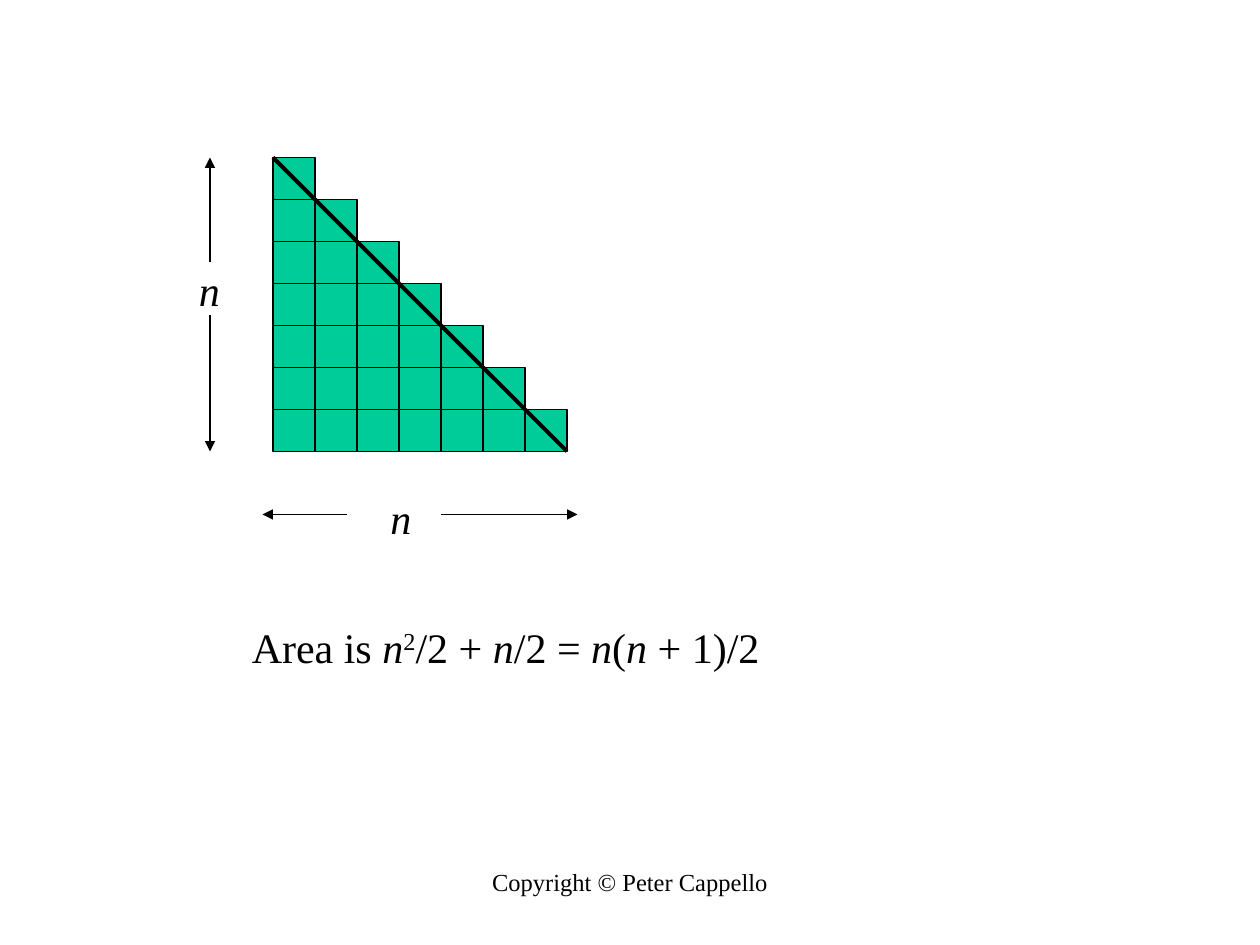
from lxml.etree import SubElement
from pptx import Presentation
from pptx.dml.color import RGBColor
from pptx.enum.shapes import MSO_CONNECTOR, MSO_SHAPE
from pptx.enum.text import MSO_AUTO_SIZE, PP_ALIGN
from pptx.oxml.ns import qn
from pptx.util import Inches, Pt

WIDE, HIGH = 10, 7.5
CELL = WIDE / 30
SIDE = 7
LEFT, TOP = 6.5, 3.75
INK, GREEN = "000000", "00CC99"


def grid(*cells):
    return [Inches(cell * CELL) for cell in cells]


def color(code):
    return RGBColor.from_string(code)


def add_square(slide, col, row):
    box = slide.shapes.add_shape(
        MSO_SHAPE.RECTANGLE, *grid(LEFT + col, TOP + row, 1, 1))
    box.shadow.inherit = False
    box.fill.solid()
    box.fill.fore_color.rgb = color(GREEN)
    box.line.color.rgb = color(INK)
    box.line.width = Pt(0.75)


def add_line(slide, start, end, width=0.75, arrow=True):
    line = slide.shapes.add_connector(
        MSO_CONNECTOR.STRAIGHT, *grid(*start, *end))
    line.line.color.rgb = color(INK)
    line.line.width = Pt(width)
    if arrow:
        SubElement(line.line._get_or_add_ln(), qn("a:tailEnd"), type="triangle")
    SubElement(line._element.spPr, qn("a:effectLst"))


def add_text(slide, place, runs, size=24, wrap=False, align=PP_ALIGN.LEFT):
    frame = slide.shapes.add_textbox(*grid(*place)).text_frame
    frame.word_wrap = wrap
    if not wrap:
        frame.auto_size = MSO_AUTO_SIZE.SHAPE_TO_FIT_TEXT
    para = frame.paragraphs[0]
    para.alignment = align
    for text, style in runs:
        run = para.add_run()
        run.text = text
        run.font.name = "Times New Roman"
        run.font.size = Pt(size)
        run.font.color.rgb = color(INK)
        run.font.italic = style == "italic"
        if style == "super":
            run._r.get_or_add_rPr().set("baseline", "30000")


def main():
    deck = Presentation()
    deck.slide_width, deck.slide_height = Inches(WIDE), Inches(HIGH)
    slide = deck.slides.add_slide(deck.slide_layouts[6])

    add_text(slide, (10.25, 20.5, 9.5, 1.5),
             [("Copyright © Peter Cappello", "plain")],
             size=14, wrap=True, align=PP_ALIGN.CENTER)

    for col in range(SIDE):
        for row in range(col, SIDE):
            add_square(slide, col, row)

    var = ("n", "italic")
    for left, top in ((4.44, 6.15), (9, 11.58)):
        add_text(slide, (left, top, 1.11, 1.5), [var])

    for start, end in (
        ((8.25, 12.25), (6.25, 12.25)),
        ((10.5, 12.25), (13.75, 12.25)),
        ((5, 6.25), (5, TOP)),
        ((5, 7.5), (5, TOP + SIDE)),
    ):
        add_line(slide, start, end)
    add_line(slide, (LEFT, TOP), (LEFT + SIDE, TOP + SIDE), 2.25, False)

    add_text(slide, (5.7, 14.64, 12.72, 1.5), [
        ("Area is ", "plain"), var, ("2", "super"), ("/2 + ", "plain"),
        var, ("/2 = ", "plain"), var, ("(", "plain"), var,
        (" + 1)/2", "plain"),
    ])
    deck.save("out.pptx")


if __name__ == "__main__":
    main()
